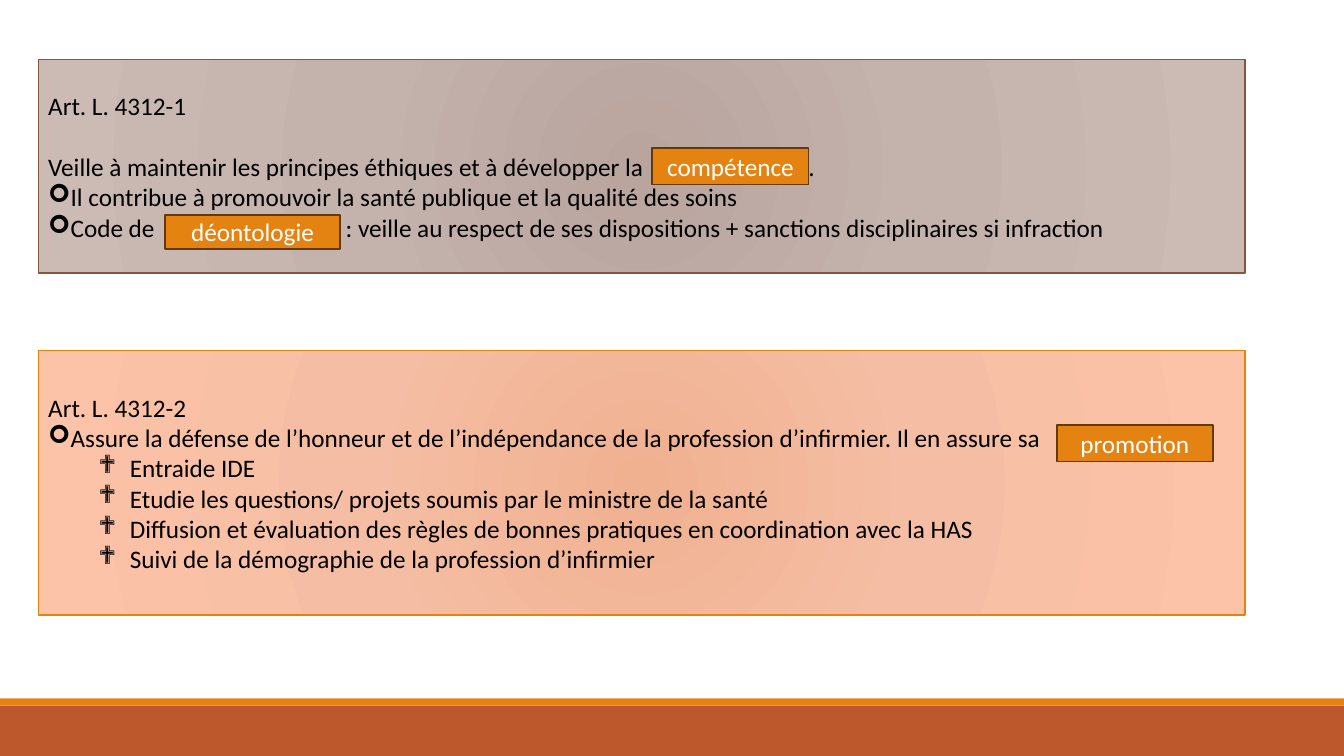
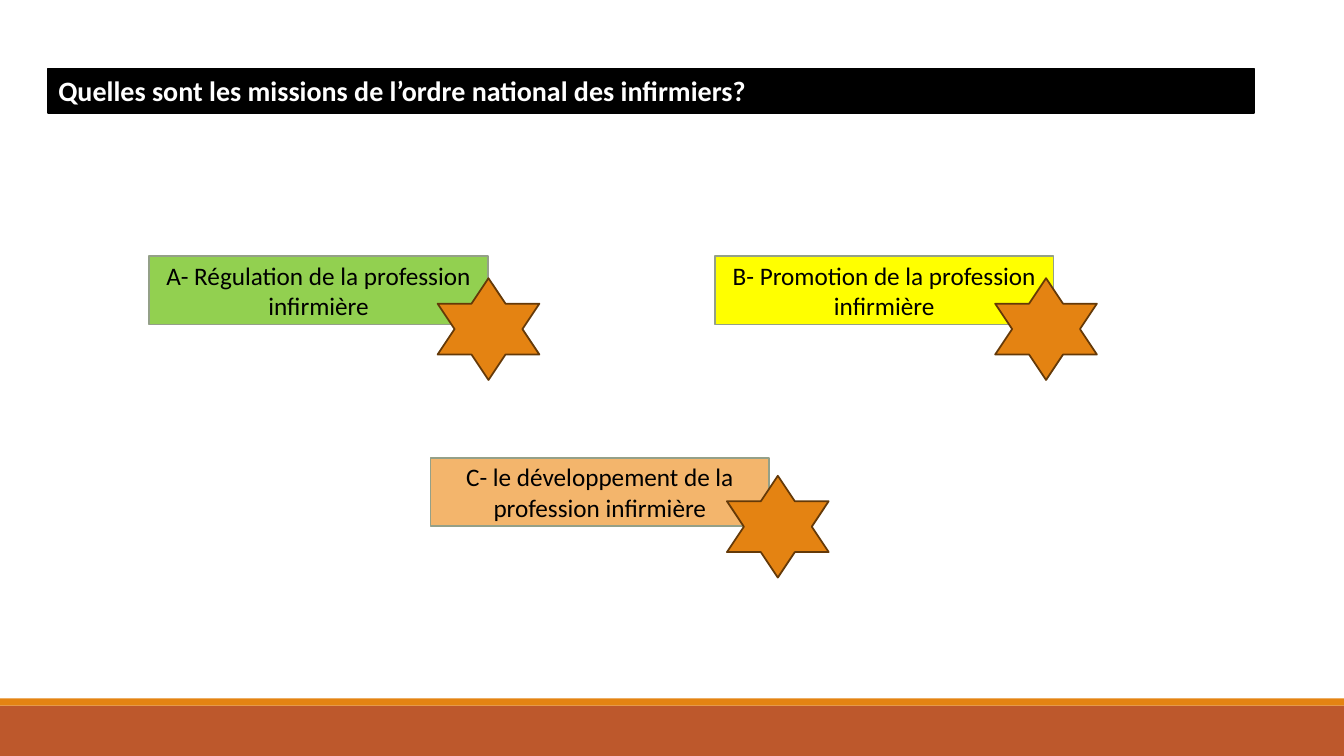
from lxml import etree
from pptx import Presentation
from pptx.dml.color import RGBColor
from pptx.enum.shapes import MSO_SHAPE
from pptx.enum.text import MSO_ANCHOR, MSO_AUTO_SIZE, PP_ALIGN
from pptx.oxml.ns import qn
from pptx.util import Inches, Pt

RECTANGLE = MSO_SHAPE.RECTANGLE
STAR = MSO_SHAPE.STAR_6_POINT
MIDDLE, TOP = MSO_ANCHOR.MIDDLE, MSO_ANCHOR.TOP
LEFT, CENTER = PP_ALIGN.LEFT, PP_ALIGN.CENTER
FIT_SHAPE = MSO_AUTO_SIZE.SHAPE_TO_FIT_TEXT

BLACK = RGBColor(0x00, 0x00, 0x00)
WHITE = RGBColor(0xFF, 0xFF, 0xFF)
RUST = RGBColor(0xBD, 0x58, 0x2C)
ORANGE = RGBColor(0xE4, 0x83, 0x12)
DARK_BROWN = RGBColor(0x64, 0x39, 0x08)
BROWN = RGBColor(0x86, 0x56, 0x40)
SAGE = RGBColor(0x94, 0xA0, 0x88)
GREEN = RGBColor(0x92, 0xD0, 0x50)
YELLOW = RGBColor(0xFF, 0xFF, 0x00)
APRICOT = RGBColor(0xF3, 0xB5, 0x6C)
TAUPE_GLOW = (RGBColor(0xB9, 0xA4, 0x9E), RGBColor(0xC4, 0xB2, 0xAD), RGBColor(0xCC, 0xBA, 0xB5))
PEACH_GLOW = (RGBColor(0xF0, 0xB1, 0x91), RGBColor(0xF5, 0xBE, 0xA4), RGBColor(0xFD, 0xC3, 0xA8))

FONT = "Calibri"
BODY_SIZE, TITLE_SIZE = 18, 20
LINE_HEIGHT = 22
ARROW, DIAMONDS = "➢", "❖"


class Deck:
    """Holds the style and the current slide."""

    def __init__(self):
        self.presentation = Presentation()
        self.presentation.slide_width = Inches(13.33)
        self.presentation.slide_height = Inches(7.5)
        self.layout = self.presentation.slide_layouts[6]
        self.slide = None

    def add_slide(self):
        self.slide = self.presentation.slides.add_slide(self.layout)

    def layout_band(self, top, height, color):
        """Draw a full-width band and move it to the shared layout."""
        band = self.shape((0, top, 13.33, height), color)
        tree = self.layout.shapes.element
        used = [int(number) for number in tree.xpath(".//p:cNvPr/@id")]
        band.element.xpath(".//p:cNvPr")[0].set("id", str(max(used) + 1))
        tree.append(band.element)

    def shape(self, box, fill=None, line=None, line_width=1.25, kind=RECTANGLE):
        shape = self.slide.shapes.add_shape(kind, *map(Inches, box))
        shape.shadow.inherit = False
        if fill is not None:
            shape.fill.solid()
            shape.fill.fore_color.rgb = fill
        if line is None:
            shape.line.fill.background()
        else:
            shape.line.color.rgb = line
            shape.line.width = Pt(line_width)
        return shape

    def set_text(self, paragraph, text, color, align, size=BODY_SIZE, bold=False):
        paragraph.text = text
        paragraph.alignment = align
        paragraph.font.name = FONT
        paragraph.font.size = Pt(size)
        paragraph.font.bold = bold
        paragraph.font.color.rgb = color

    def label(self, box, text, fill, line, color):
        shape = self.shape(box, fill, line)
        shape.text_frame.word_wrap = True
        shape.text_frame.vertical_anchor = MIDDLE
        self.set_text(shape.text_frame.paragraphs[0], text, color, CENTER)

    def answer(self, left, top, width, height, text):
        self.label((left, top, width, height), text, ORANGE, DARK_BROWN, WHITE)

    def star(self, left, top):
        self.shape((left, top, 1.01, 1.01), ORANGE, DARK_BROWN, kind=STAR)

    def title(self, text):
        shape = self.shape((0.48, 0.68, 11.96, 0.44), BLACK, BLACK)
        frame = shape.text_frame
        frame.word_wrap = True
        frame.vertical_anchor = TOP
        frame.auto_size = FIT_SHAPE
        self.set_text(frame.paragraphs[0], text, WHITE, LEFT, TITLE_SIZE, True)

    def glow(self, shape, colors):
        """Fill a shape with a circular gradient from its centre."""
        shape.fill.gradient()
        gradient = shape.element.spPr.find(qn("a:gradFill"))
        for child in list(gradient):
            gradient.remove(child)
        stops = etree.SubElement(gradient, qn("a:gsLst"))
        for position, color in zip((0, 45000, 100000), colors):
            stop = etree.SubElement(stops, qn("a:gs"), pos=str(position))
            etree.SubElement(stop, qn("a:srgbClr"), val=str(color))
        circle = etree.SubElement(gradient, qn("a:path"), path="circle")
        sides = dict.fromkeys("ltrb", "100000")
        etree.SubElement(circle, qn("a:fillToRect"), **sides)

    def article(self, top, height, colors, line, heading, items, heading_gap=0):
        """Panel with a heading and items of (bullet, text, tab stop)."""
        shape = self.shape((0.38, top, 11.97, height), line=line, line_width=1)
        self.glow(shape, colors)
        frame = shape.text_frame
        frame.word_wrap = True
        frame.vertical_anchor = MIDDLE
        self.set_text(frame.paragraphs[0], heading, BLACK, LEFT)
        frame.paragraphs[0].space_after = Pt(heading_gap)
        for bullet, text, tab in items:
            paragraph = frame.add_paragraph()
            self.format_item(paragraph, bullet, tab)
            self.set_text(paragraph, text, BLACK, LEFT)

    def format_item(self, paragraph, bullet, tab):
        properties = paragraph._p.get_or_add_pPr()
        if bullet == DIAMONDS:
            paragraph.level = 1
            properties.set("marL", str(Inches(0.81)))
            properties.set("indent", str(Inches(-0.31)))
        if bullet:
            etree.SubElement(properties, qn("a:buFont"), typeface="Wingdings")
            etree.SubElement(properties, qn("a:buChar"), char=bullet)
        if tab:
            tabs = etree.SubElement(properties, qn("a:tabLst"))
            etree.SubElement(tabs, qn("a:tab"), pos=str(Inches(tab)), algn="l")


def main():
    deck = Deck()

    # Articles with the missing words, and the shared footer bands
    deck.add_slide()
    deck.layout_band(7, 0.5, RUST)
    deck.layout_band(6.93, 0.07, ORANGE)
    deck.article(0.59, 2.12, TAUPE_GLOW, BROWN, "Art. L. 4312-1", [
        (None, "Veille à maintenir les principes éthiques et à développer la\t.", 7.54),
        (ARROW, "Il contribue à promouvoir la santé publique et la qualité des soins", None),
        (ARROW, "Code de\t: veille au respect de ses dispositions + sanctions "
                "disciplinaires si infraction", 2.95),
    ], heading_gap=LINE_HEIGHT)
    missions = (
        "Entraide IDE",
        "Etudie les questions/ projets soumis par le ministre de la santé",
        "Diffusion et évaluation des règles de bonnes pratiques en coordination avec la HAS",
        "Suivi de la démographie de la profession d’infirmier",
    )
    deck.article(3.48, 2.62, PEACH_GLOW, ORANGE, "Art. L. 4312-2", [
        (ARROW, "Assure la défense de l’honneur et de l’indépendance de la "
                "profession d’infirmier. Il en assure sa", None),
        *((DIAMONDS, mission, None) for mission in missions),
    ])
    deck.answer(1.64, 2.13, 1.73, 0.34, "déontologie")
    deck.answer(10.48, 4.22, 1.55, 0.36, "promotion")
    deck.answer(6.47, 1.47, 1.55, 0.36, "compétence")

    # Quiz: every choice carries a star
    deck.add_slide()
    deck.title("Quelles sont les missions de l’ordre national des infirmiers?")
    choices = (
        (1.48, 2.54, GREEN, "A- Régulation de la profession infirmière", 4.34, 2.76),
        (7.09, 2.54, YELLOW, "B- Promotion de la profession infirmière", 9.87, 2.76),
        (4.27, 4.54, APRICOT, "C- le développement de la profession infirmière", 7.21, 4.72),
    )
    for left, top, fill, text, star_left, star_top in choices:
        deck.label((left, top, 3.36, 0.68), text, fill, SAGE, BLACK)
        deck.star(star_left, star_top)

    deck.presentation.save("out.pptx")


if __name__ == "__main__":
    main()
